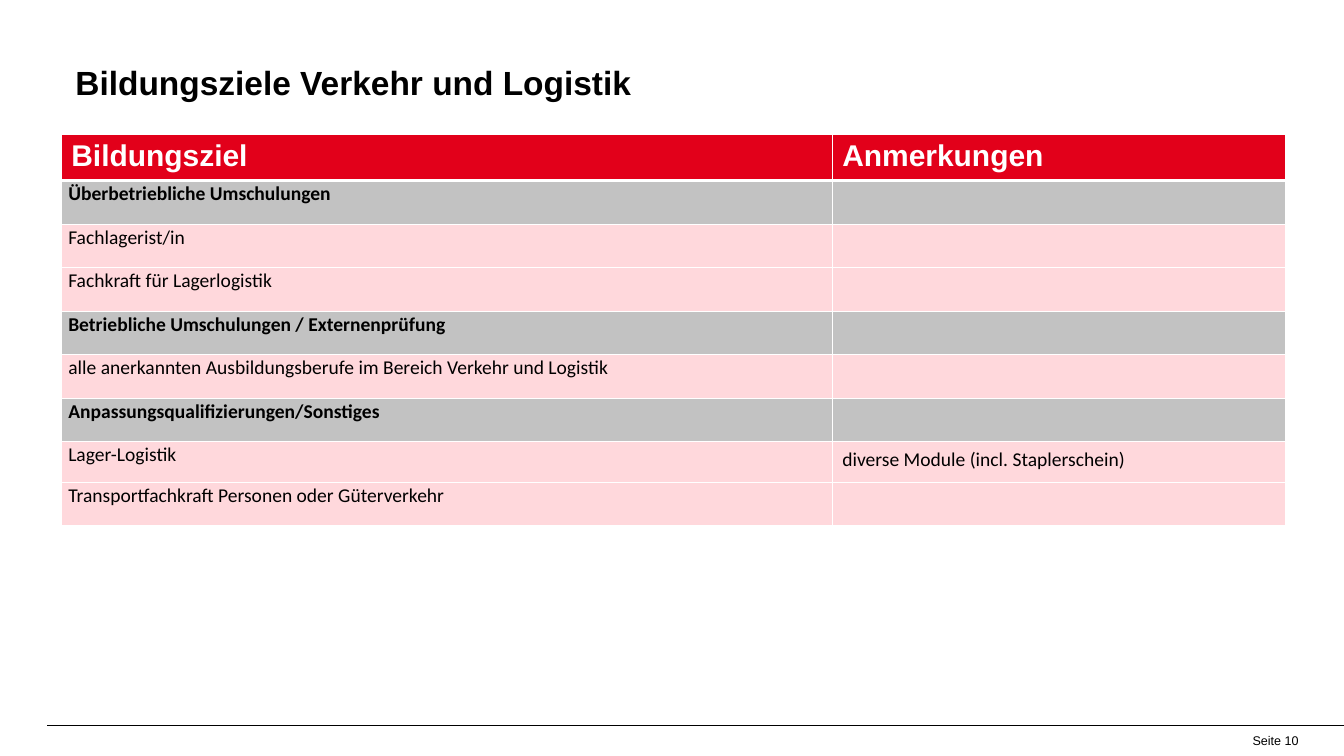
import pptx
import pptx.util
import pptx.dml.color
import pptx.enum.shapes
import pptx.enum.text
import pptx.oxml
import pptx.oxml.ns
import lxml.etree

Pt = pptx.util.Pt
ALIGN = pptx.enum.text.PP_ALIGN
ANCHOR = pptx.enum.text.MSO_ANCHOR

TITLE = "Bildungsziele Verkehr und Logistik"
FOOTER = "Seite 10"
HEADS = ("Bildungsziel", "Anmerkungen")
# Each group: heading, then its rows of (goal, remark)
GROUPS = [
    ("Überbetriebliche Umschulungen",
     [("Fachlagerist/in", ""), ("Fachkraft für Lagerlogistik", "")]),
    ("Betriebliche Umschulungen / Externenprüfung",
     [("alle anerkannten Ausbildungsberufe im Bereich Verkehr und Logistik", "")]),
    ("Anpassungsqualifizierungen/Sonstiges",
     [("Lager-Logistik", "diverse Module (incl. Staplerschein)"),
      ("Transportfachkraft Personen oder Güterverkehr", "")]),
]
COLORS = {"black": "000000", "white": "FFFFFF", "red": "E2001A",
          "gray": "C2C2C2", "pink": "FFD8DC"}

WIDE, HIGH = 964, 542
LEFT, TOP = 44, 96.5
COLS = (553, 325.5)
HEAD_H, ROW_H, NOTE_H = 31, 31.2, 29.4
RULE_X, RULE_Y = 34, 520


def color(name):
    return pptx.dml.color.RGBColor.from_string(COLORS[name])


def style(para, font, size, tint="black", bold=False):
    for run in para.runs:
        run.font.name = font
        run.font.size = Pt(size)
        run.font.bold = bold
        run.font.color.rgb = color(tint)


def add_text(slide, box, text, size, bold=False, align=ALIGN.LEFT):
    frame = slide.shapes.add_textbox(*map(Pt, box)).text_frame
    frame.word_wrap = True
    frame.vertical_anchor = ANCHOR.MIDDLE
    frame.text = text
    para = frame.paragraphs[0]
    para.alignment = align
    style(para, "Arial", size, bold=bold)


def add_rule(slide):
    line = slide.shapes.add_connector(
        pptx.enum.shapes.MSO_CONNECTOR.STRAIGHT,
        Pt(RULE_X), Pt(RULE_Y), Pt(WIDE), Pt(RULE_Y))
    line.line.color.rgb = color("black")
    line.line.width = Pt(0.5)
    props = line._element.spPr
    lxml.etree.SubElement(props, pptx.oxml.ns.qn("a:effectLst"))


def set_edges(cell, widths):
    """Draw white borders; widths are for left, right, top and bottom."""
    props = cell._tc.get_or_add_tcPr()
    for spot, (side, width) in enumerate(zip("LRTB", widths)):
        edge = pptx.oxml.parse_xml(
            f'<a:ln{side} {pptx.oxml.ns.nsdecls("a")} w="{Pt(width)}">'
            f'<a:solidFill><a:srgbClr val="{COLORS["white"]}"/></a:solidFill>'
            f'</a:ln{side}>')
        props.insert(spot, edge)


def fill_cell(cell, text, fill, font, size, tint="black", bold=False):
    cell.fill.solid()
    cell.fill.fore_color.rgb = color(fill)
    cell.text = text
    style(cell.text_frame.paragraphs[0], font, size, tint, bold)


def add_goals(slide):
    rows = []
    for name, goals in GROUPS:
        rows.append((name, "", "gray"))
        rows += [(goal, note, "pink") for goal, note in goals]
    heights = [HEAD_H] + [NOTE_H if note else ROW_H for _, note, _ in rows]
    table = slide.shapes.add_table(
        len(heights), len(COLS), Pt(LEFT), Pt(TOP),
        Pt(sum(COLS)), Pt(sum(heights))).table
    for col, width in zip(table.columns, COLS):
        col.width = Pt(width)
    for row, height in zip(table.rows, heights):
        row.height = Pt(height)

    for c, head in enumerate(HEADS):
        cell = table.cell(0, c)
        fill_cell(cell, head, "red", "Arial", 21.5, "white", True)
        set_edges(cell, (1, 1, 1, 3))
    for r, (goal, note, fill) in enumerate(rows, 1):
        for c, text in enumerate((goal, note)):
            cell = table.cell(r, c)
            fill_cell(cell, text, fill, "Calibri", 14, bold=fill == "gray")
            cell.text_frame.paragraphs[0].line_spacing = 1.07
            if c == 0:
                cell.margin_left = cell.margin_right = Pt(5)
                cell.margin_top = cell.margin_bottom = 0
            set_edges(cell, (1, 1, 3 if r == 1 else 1, 1))


def main():
    deck = pptx.Presentation()
    deck.slide_width, deck.slide_height = Pt(WIDE), Pt(HIGH)
    slide = deck.slides.add_slide(deck.slide_layouts[6])
    add_rule(slide)
    add_text(slide, (47, 41, 883, 36), TITLE, 24, bold=True)
    add_text(slide, (870.5, RULE_Y, 68, 22), FOOTER, 9, align=ALIGN.RIGHT)
    add_goals(slide)
    deck.save("out.pptx")


if __name__ == "__main__":
    main()
